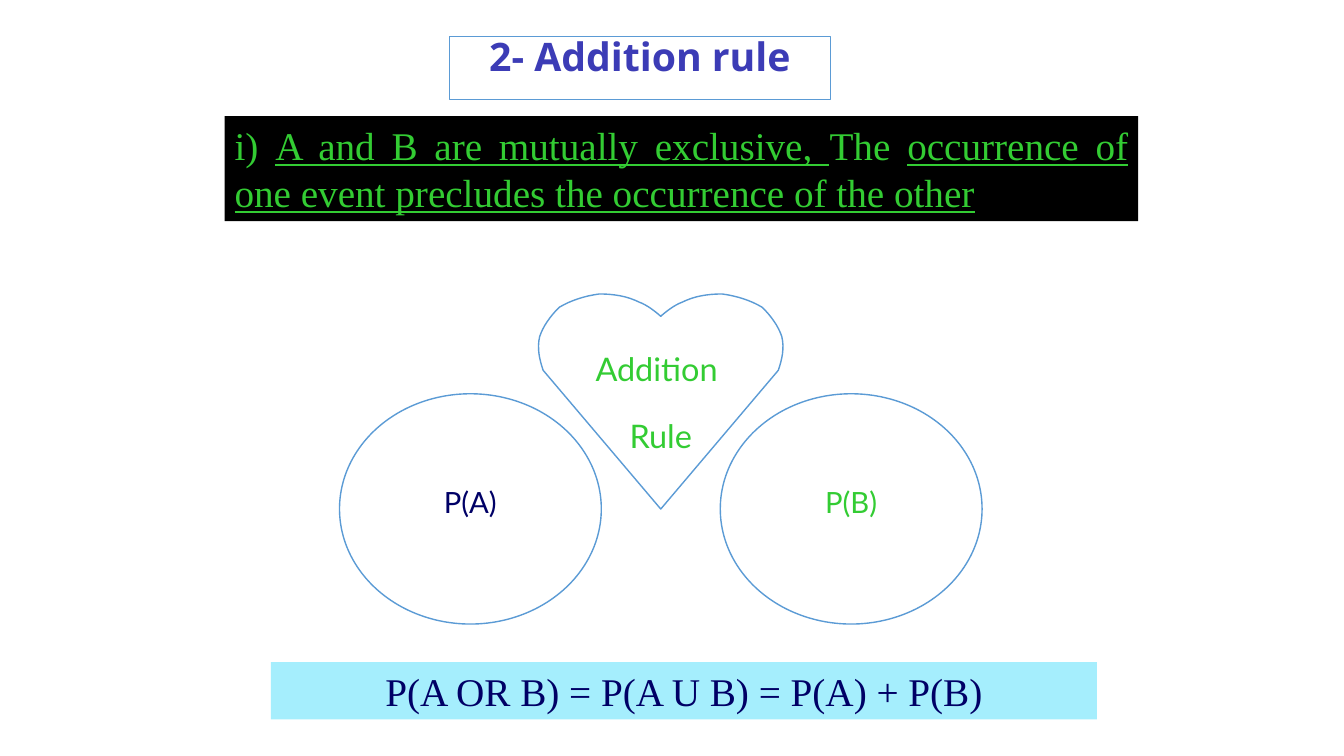
import pptx
import pptx.util
import pptx.dml.color
import pptx.enum.shapes
import pptx.enum.text

Pt = pptx.util.Pt
SHAPE = pptx.enum.shapes.MSO_SHAPE
ALIGN = pptx.enum.text.PP_ALIGN
ANCHOR = pptx.enum.text.MSO_ANCHOR

BLUE, GREEN, NAVY, WHITE = "5B9BD5", "33CC33", "000066", "FFFFFF"

TITLE = "2- Addition rule"
TITLE_BOX = (321, 26, 272, 45)
RULE = [("i) ", False), ("A and B are mutually exclusive, ", True), ("The ", False),
        ("occurrence of one event precludes the occurrence of the other", True)]
FORMULA = [("P(A OR B) = P(A U B) = P(A) + P(B)", False)]
BANDS = [
    ((160.5, 83, 652.5, 75), "000000", RULE, GREEN, ALIGN.JUSTIFY),
    ((193.5, 473, 590, 41), "A5EEFD", FORMULA, NAVY, ALIGN.CENTER),
]
EVENTS = [("P(A)", NAVY), ("P(B)", GREEN)]
HEART_LINES = ["Addition ", "Rule"]

CENTER_X = 472
CIRCLE_W, CIRCLE_H, CIRCLE_TOP, CIRCLE_OFFSET = 187, 164.5, 281.25, 136
HEART_NOTCH, HEART_TIP = (0, 226), (0, 363.6)
HEART_CURVES = [
    ((-3, 223), (-10.5, 217.5), (-15, 216)),
    ((-24, 211.5), (-33.5, 210), (-44, 210)),
    ((-54.5, 211.5), (-64, 214.5), (-72.5, 219.5)),
    ((-79, 226), (-84, 233), (-86.5, 240.5)),
    ((-88.5, 249), (-86.5, 257), (-84, 264.5)),
]
STEPS = 8


def rgb(color):
    return pptx.dml.color.RGBColor.from_string(color)


def add_text(p, text, size, font, color, bold=False, underline=False, raised=False):
    r = p.add_run()
    r.text = text
    r.font.size = Pt(size)
    r.font.name = font
    r.font.color.rgb = rgb(color)
    r.font.bold = bold
    r.font.underline = underline
    if raised:
        r.font._element.set("baseline", "30000")


def style(sp, fill, line=None, width=1):
    sp.shadow.inherit = False
    sp.fill.solid()
    sp.fill.fore_color.rgb = rgb(fill)
    if line:
        sp.line.color.rgb = rgb(line)
        sp.line.width = Pt(width)
    else:
        sp.line.fill.background()


def add_label(sp, lines, size, color):
    tf = sp.text_frame
    tf.word_wrap = False
    tf.vertical_anchor = ANCHOR.MIDDLE
    for i, text in enumerate(lines):
        p = tf.add_paragraph() if i else tf.paragraphs[0]
        p.alignment = ALIGN.CENTER
        add_text(p, text, size, "Lato", color, raised=True)


def heart_points():
    left = [HEART_NOTCH]
    for curve in HEART_CURVES:
        a, b, c, d = (left[-1], *curve)
        for i in range(1, STEPS + 1):
            t = i / STEPS
            u = 1 - t
            left.append(tuple(u**3 * a[k] + 3 * u * u * t * b[k] + 3 * u * t * t * c[k] + t**3 * d[k]
                              for k in (0, 1)))
    right = [(-x, y) for x, y in reversed(left[1:])]
    return [(Pt(CENTER_X + x), Pt(y)) for x, y in left + [HEART_TIP] + right]


prs = pptx.Presentation()
prs.slide_width, prs.slide_height = Pt(960), Pt(540)
s = prs.slides.add_slide(prs.slide_layouts[5])

title = s.shapes.title
title.left, title.top, title.width, title.height = map(Pt, TITLE_BOX)
title.line.color.rgb = rgb(BLUE)
title.line.width = Pt(0.75)
tf = title.text_frame
tf.auto_size = pptx.enum.text.MSO_AUTO_SIZE.NONE
tf.vertical_anchor = ANCHOR.TOP
tf.margin_top = Pt(1)
p = tf.paragraphs[0]
p.alignment = ALIGN.CENTER
p.line_spacing = 0.9
add_text(p, TITLE, 28, "Noto Sans", "3C3CB6", bold=True)

for box, fill, runs, color, align in BANDS:
    sp = s.shapes.add_shape(SHAPE.RECTANGLE, *map(Pt, box))
    style(sp, fill)
    tf = sp.text_frame
    tf.word_wrap = True
    tf.vertical_anchor = ANCHOR.TOP
    p = tf.paragraphs[0]
    p.alignment = align
    for text, underline in runs:
        add_text(p, text, 28, "Times New Roman", color, underline=underline)

for side, (text, color) in zip((-1, 1), EVENTS):
    left = CENTER_X + side * CIRCLE_OFFSET - CIRCLE_W / 2
    sp = s.shapes.add_shape(SHAPE.OVAL, Pt(left), Pt(CIRCLE_TOP), Pt(CIRCLE_W), Pt(CIRCLE_H))
    style(sp, WHITE, BLUE)
    add_label(sp, [text], 36, color)

points = heart_points()
fb = s.shapes.build_freeform(*points[0])
fb.add_line_segments(points[1:], close=True)
heart = fb.convert_to_shape()
style(heart, WHITE, BLUE)
heart.text_frame.margin_top = Pt(15)
add_label(heart, HEART_LINES, 40, GREEN)

prs.save("out.pptx")
